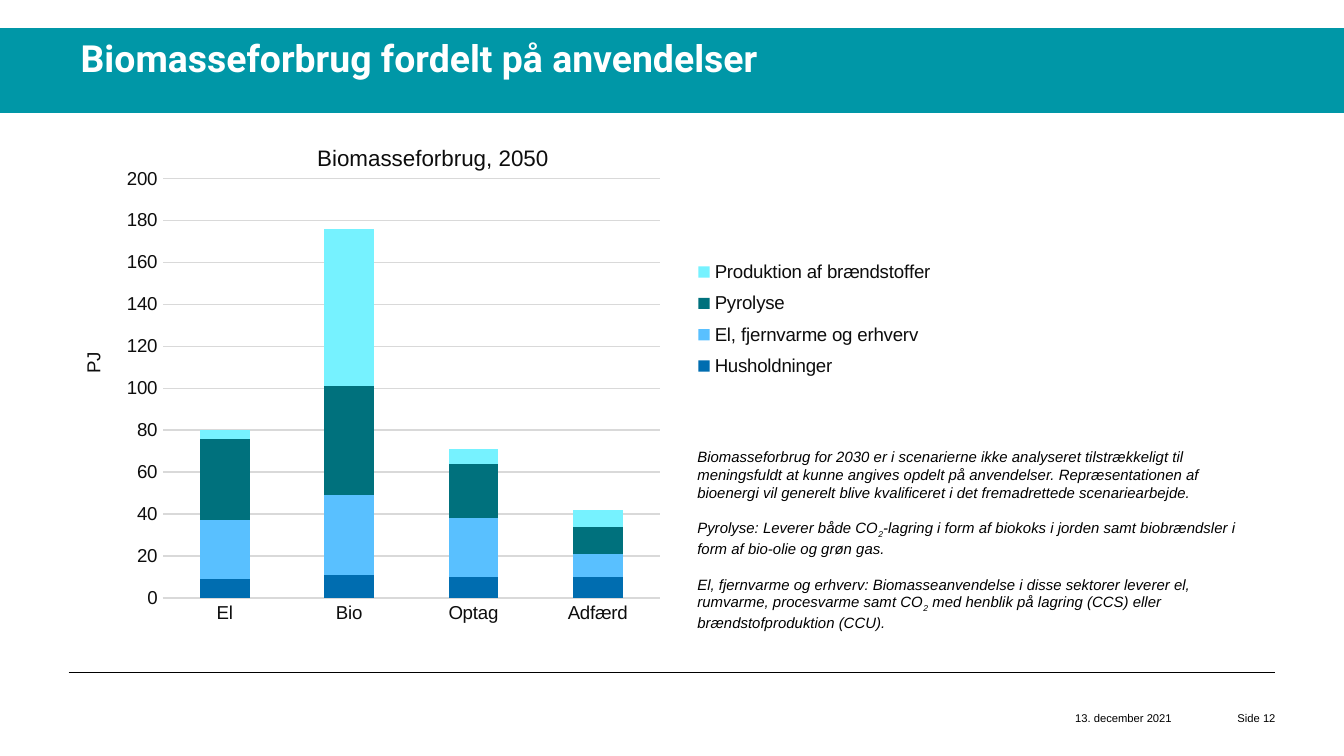
"""Build the slide on biomass use by application."""
from lxml.etree import SubElement
from pptx import Presentation
from pptx.chart.data import CategoryChartData
from pptx.dml.color import RGBColor
from pptx.enum.chart import XL_CHART_TYPE, XL_LEGEND_POSITION, XL_TICK_MARK
from pptx.enum.shapes import MSO_CONNECTOR, MSO_SHAPE
from pptx.enum.text import MSO_ANCHOR, MSO_AUTO_SIZE, PP_ALIGN
from pptx.oxml.ns import qn
from pptx.util import Inches, Pt

HUES = {"band": "0097A7", "ink": "000000", "soft": "0D0D0D",
        "grid": "D9D9D9", "white": "FFFFFF"}
TITLE = "Biomasseforbrug fordelt på anvendelser"
HEAD, UNIT = "Biomasseforbrug, 2050", "PJ"
WIDE, HIGH = 6.56, 3.83
CATS = ["El", "Bio", "Optag", "Adfærd"]
SERIES = [
    ("Husholdninger ", "006DB0", (9, 11, 10, 10)),
    ("El, fjernvarme og erhverv ", "59C0FF", (28, 38, 28, 11)),
    ("Pyrolyse", "00717D", (39, 52, 26, 13)),
    ("Produktion af brændstoffer", "76F2FF", (4, 75, 7, 8)),
]
NOTES = [
    ["Biomasseforbrug for 2030 er i scenarierne ikke analyseret "
     "tilstrækkeligt til meningsfuldt at kunne angives opdelt på "
     "anvendelser. Repræsentationen af bioenergi vil generelt blive "
     "kvalificeret i det fremadrettede scenariearbejde."],
    ["Pyrolyse: Leverer både CO", "2",
     "-lagring i form af biokoks i jorden samt biobrændsler i form af "
     "bio-olie og grøn gas."],
    ["El, fjernvarme og erhverv: Biomasseanvendelse i disse sektorer "
     "leverer el, rumvarme, procesvarme samt CO", "2",
     " med henblik på lagring (CCS) eller brændstofproduktion (CCU)."],
]
FOOT = [
    ("13. december 2021", (7.91, 5.25, 1.35, 0.3), PP_ALIGN.LEFT),
    ("Side 12", (8.7, 5.25, 0.88, 0.3), PP_ALIGN.RIGHT),
]


def box(*sizes):
    return [Inches(size) for size in sizes]


def tint(name):
    return RGBColor.from_string(HUES.get(name, name))


def style(font, size, hue, face="Arial", bold=False, slant=False):
    font.size, font.name = Pt(size), face
    font.bold, font.italic = bold, slant
    font.color.rgb = tint(hue)


def write(para, text, *look, **more):
    run = para.add_run()
    run.text = text
    style(run.font, *look, **more)
    return run


def place(part, *spot, inner=False):
    for old in part.findall(qn("c:layout")):
        part.remove(old)
    node = SubElement(part, qn("c:layout"))
    over = part.find(qn("c:overlay"))
    if over is None:
        part.insert(0, node)
    else:
        over.addprevious(node)
    man = SubElement(node, qn("c:manualLayout"))
    marks = {"layoutTarget": "inner"} if inner else {}
    marks.update(xMode="edge", yMode="edge")
    marks.update(zip("xywh", (size / full for size, full
                              in zip(spot, (WIDE, HIGH) * 2))))
    for key, val in marks.items():
        SubElement(man, qn(f"c:{key}")).set("val", str(val))


def add_frame(slide):
    title = slide.shapes.title
    title.left, title.top, title.width, title.height = box(0.51, 0.21, 9.15, 0.32)
    frame = title.text_frame
    frame.word_wrap, frame.auto_size = True, MSO_AUTO_SIZE.NONE
    frame.vertical_anchor = MSO_ANCHOR.TOP
    frame.margin_left, frame.margin_top = box(0.09, 0.05)
    para = frame.paragraphs[0]
    para.alignment = PP_ALIGN.LEFT
    write(para, TITLE, 20, "white", "Roboto", bold=True)

    band = slide.shapes.add_shape(MSO_SHAPE.RECTANGLE, *box(0, 0.21, 10.04, 0.63))
    band.shadow.inherit = False
    band.fill.solid()
    band.fill.fore_color.rgb = tint("band")
    band.line.fill.background()
    title.element.addprevious(band.element)

    rule = slide.shapes.add_connector(MSO_CONNECTOR.STRAIGHT, *box(0.51, 5, 9.49, 5))
    rule.line.color.rgb, rule.line.width = tint("ink"), Pt(0.5)
    SubElement(rule.element.spPr, qn("a:effectLst"))

    for text, spot, align in FOOT:
        frame = slide.shapes.add_textbox(*box(*spot)).text_frame
        frame.word_wrap = True
        frame.margin_left, frame.margin_right = box(0.09, 0.09)
        frame.margin_top, frame.margin_bottom = box(0.04, 0.04)
        frame.paragraphs[0].alignment = align
        write(frame.paragraphs[0], text, 6, "ink")


def add_graph(slide):
    data = CategoryChartData(number_format="0")
    data.categories = CATS
    for name, _, vals in SERIES:
        data.add_series(name, vals)
    chart = slide.shapes.add_chart(XL_CHART_TYPE.COLUMN_STACKED,
                                   *box(0.49, 0.9, WIDE, HIGH), data).chart
    style(chart.font, 10, "soft")
    plot = chart.plots[0]
    plot.gap_width, plot.overlap, plot.vary_by_categories = 150, 100, False
    for bar, (_, hue, _) in zip(plot.series, SERIES):
        bar.format.fill.solid()
        bar.format.fill.fore_color.rgb = tint(hue)

    cat, val = chart.category_axis, chart.value_axis
    for axis in (cat, val):
        axis.major_tick_mark = axis.minor_tick_mark = XL_TICK_MARK.NONE
        style(axis.tick_labels.font, 10, "soft")
    val.minimum_scale, val.maximum_scale, val.major_unit = 0, 200, 20
    val.tick_labels.number_format = "0"
    val.tick_labels.number_format_is_linked = False
    val.format.line.fill.background()
    for line in (cat.format.line, val.major_gridlines.format.line):
        line.color.rgb, line.width = tint("grid"), Pt(0.75)

    for head, text, size in ((chart.chart_title, HEAD, 12),
                             (val.axis_title, UNIT, 10)):
        write(head.text_frame.paragraphs[0], text, size, "soft")
    chart.has_legend = True
    chart.legend.position = XL_LEGEND_POSITION.RIGHT
    chart.legend.include_in_layout = False
    style(chart.legend.font, 10, "soft")

    def find(route):
        return chart.element.xpath(route)[0]

    find("//c:valAx/c:title//a:bodyPr").set("rot", "-5400000")
    place(find("//c:plotArea"), 0.72, 0.43, 3.7, 3.12, inner=True)
    place(find("//c:chart/c:title"), 1.84, 0.14)
    place(find("//c:valAx/c:title"), 0.09, 1.7)
    place(find("//c:legend"), 4.62, 0.97, 1.9, 1.01)


def add_notes(slide):
    frame = slide.shapes.add_textbox(*box(5.09, 3.28, 4.33, 1.45)).text_frame
    frame.word_wrap = True
    for i, parts in enumerate(NOTES):
        para = frame.add_paragraph() if i else frame.paragraphs[0]
        if i:
            para.space_before = Pt(9.6)
        for part in parts:
            run = write(para, part, 8, "ink", slant=True)
            if part == "2":
                run.font._element.set("baseline", "-25000")


def main():
    deck = Presentation()
    deck.slide_width = Inches(10)
    deck.slide_height = deck.slide_width * 9 // 16
    slide = deck.slides.add_slide(deck.slide_layouts[5])
    add_frame(slide)
    add_graph(slide)
    add_notes(slide)
    deck.save("out.pptx")


if __name__ == "__main__":
    main()
